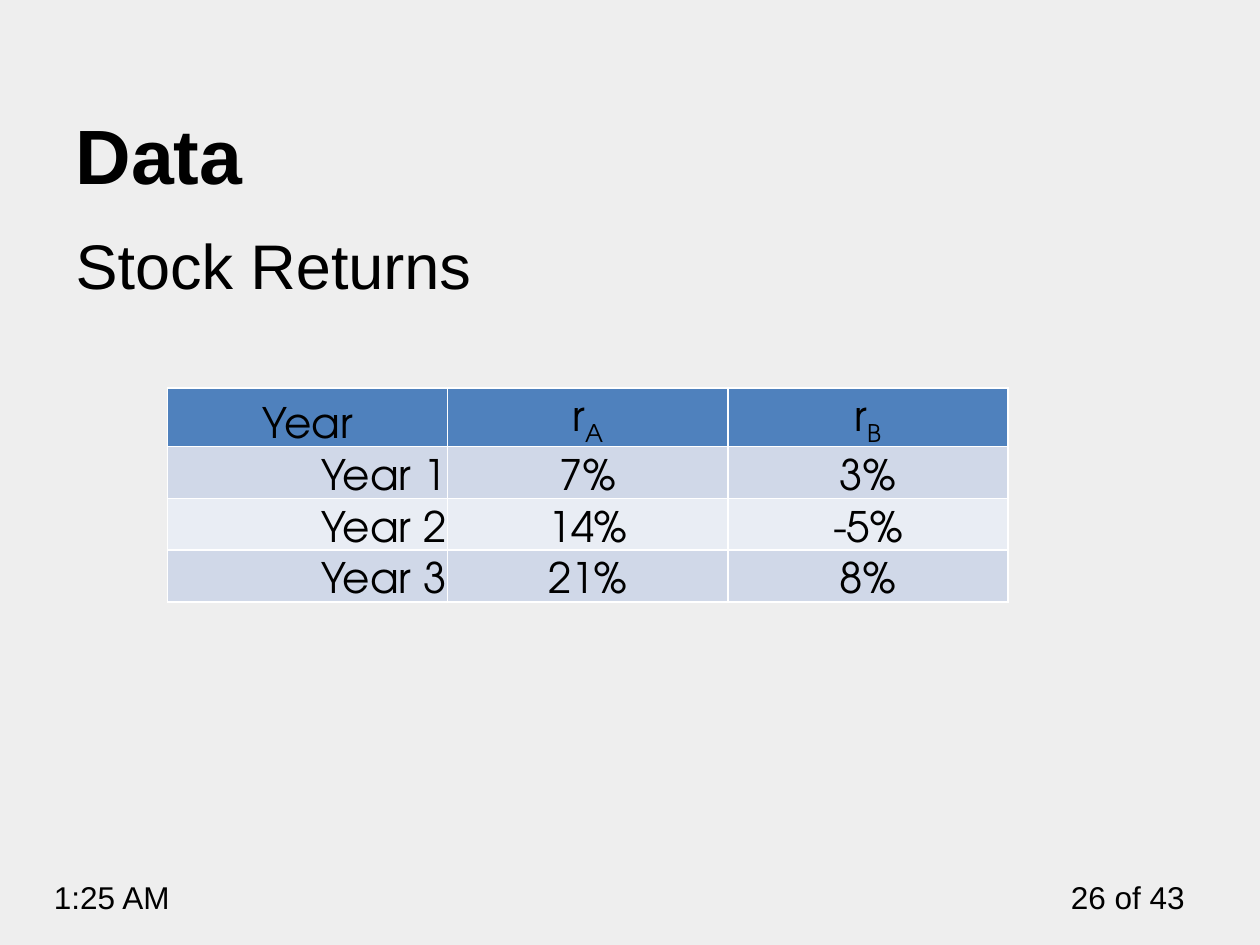
from dataclasses import dataclass

import pptx
import pptx.dml.color
import pptx.enum.text
import pptx.oxml
import pptx.oxml.ns
import pptx.util

ALIGN = pptx.enum.text.PP_ALIGN
ANCHOR = pptx.enum.text.MSO_ANCHOR


@dataclass(frozen=True)
class Theme:
    text: str = "000000"
    background: str = "EEEEEE"
    header: str = "4F81BD"
    bands: tuple = ("D0D8E8", "E9EDF4")
    border: str = "FFFFFF"
    border_width: float = 1
    font: str = "Arial"
    table_font: str = "TeX Gyre Adventor"
    title_size: int = 44
    body_size: int = 36
    table_size: int = 24
    footer_size: int = 18


THEME = Theme()
WIDTH, HEIGHT = pptx.util.Inches(10), pptx.util.Inches(7.5)

# Each header cell is a base and a subscript.
HEADER = [("Year", ""), ("r", "A"), ("r", "B")]
RETURNS = [
    ("Year 1", "7%", "3%"),
    ("Year 2", "14%", "-5%"),
    ("Year 3", "21%", "8%"),
]


def share(left, top, width, height):
    """Turn inches on the 10 by 7.5 slide into a box scaled to its size."""
    return (round(WIDTH * left / 10), round(HEIGHT * top / 7.5),
            round(WIDTH * width / 10), round(HEIGHT * height / 7.5))


def color(value):
    return pptx.dml.color.RGBColor.from_string(value)


def format_para(para, size, font=THEME.font, bold=False, align=ALIGN.LEFT):
    para.alignment = align
    for span in para.runs:
        span.font.size = pptx.util.Pt(size)
        span.font.name = font
        span.font.bold = bold
        span.font.color.rgb = color(THEME.text)


def place(shape, box):
    shape.left, shape.top, shape.width, shape.height = box


def add_title(page, box, text):
    title = page.shapes.title
    place(title, box)
    title.text_frame.text = text
    title.text_frame.vertical_anchor = ANCHOR.BOTTOM
    format_para(title.text_frame.paragraphs[0], THEME.title_size, bold=True)


def add_body(page, box, text):
    body = page.placeholders[1]
    place(body, box)
    body.text_frame.text = text
    para = body.text_frame.paragraphs[0]
    para.space_before = pptx.util.Pt(0)
    properties = para._p.get_or_add_pPr()
    indent = pptx.util.Inches(0.38)
    properties.set("marL", str(indent))
    properties.set("indent", str(-indent))
    pptx.oxml.ns.qn("a:buNone")
    properties.append(pptx.oxml.parse_xml(
        f'<a:buNone {pptx.oxml.ns.nsdecls("a")}/>'))
    format_para(para, THEME.body_size)


def add_footer(page, box, text, align):
    frame = page.shapes.add_textbox(*box).text_frame
    frame.word_wrap = True
    frame.text = text
    format_para(frame.paragraphs[0], THEME.footer_size, align=align)


def style_cell(cell, fill, align):
    cell.vertical_anchor = ANCHOR.BOTTOM
    cell.margin_left = cell.margin_right = cell.margin_top = pptx.util.Inches(0.01)
    cell.margin_bottom = 0
    properties = cell._tc.get_or_add_tcPr()
    for side in "LRTB":
        properties.append(pptx.oxml.parse_xml(
            f'<a:ln{side} {pptx.oxml.ns.nsdecls("a")} '
            f'w="{pptx.util.Pt(THEME.border_width)}"><a:solidFill>'
            f'<a:srgbClr val="{THEME.border}"/></a:solidFill></a:ln{side}>'))
    cell.fill.solid()
    cell.fill.fore_color.rgb = color(fill)
    format_para(cell.text_frame.paragraphs[0], THEME.table_size,
                THEME.table_font, align=align)


def add_returns_table(page, box, header, rows):
    table = page.shapes.add_table(len(rows) + 1, len(header), *box).table
    for column, (base, subscript) in enumerate(header):
        cell = table.cell(0, column)
        cell.text_frame.text = base
        if subscript:
            span = cell.text_frame.paragraphs[0].add_run()
            span.text = subscript
            span._r.get_or_add_rPr().set("baseline", "-25000")
        style_cell(cell, THEME.header, ALIGN.CENTER)
    for row, values in enumerate(rows):
        for column, value in enumerate(values):
            cell = table.cell(row + 1, column)
            cell.text_frame.text = value
            style_cell(cell, THEME.bands[row % 2],
                       ALIGN.CENTER if column else ALIGN.RIGHT)


def build_data_slide(deck):
    page = deck.slides.add_slide(deck.slide_layouts[1])
    page.background.fill.solid()
    page.background.fill.fore_color.rgb = color(THEME.background)
    add_footer(page, share(8.33, 6.92, 1.17, 0.4), "26 of 43", ALIGN.RIGHT)
    add_footer(page, share(0.33, 6.92, 1.58, 0.4), "1:25 AM", ALIGN.LEFT)
    add_body(page, share(0.5, 1.75, 9, 4.95), "Stock Returns")
    add_title(page, share(0.5, 0.39, 9, 1.25), "Data")
    add_returns_table(page, share(1.33, 3.08, 6.67, 1.64), HEADER, RETURNS)


def main():
    deck = pptx.Presentation()
    deck.slide_width, deck.slide_height = WIDTH, HEIGHT
    build_data_slide(deck)
    deck.save("out.pptx")


if __name__ == "__main__":
    main()
